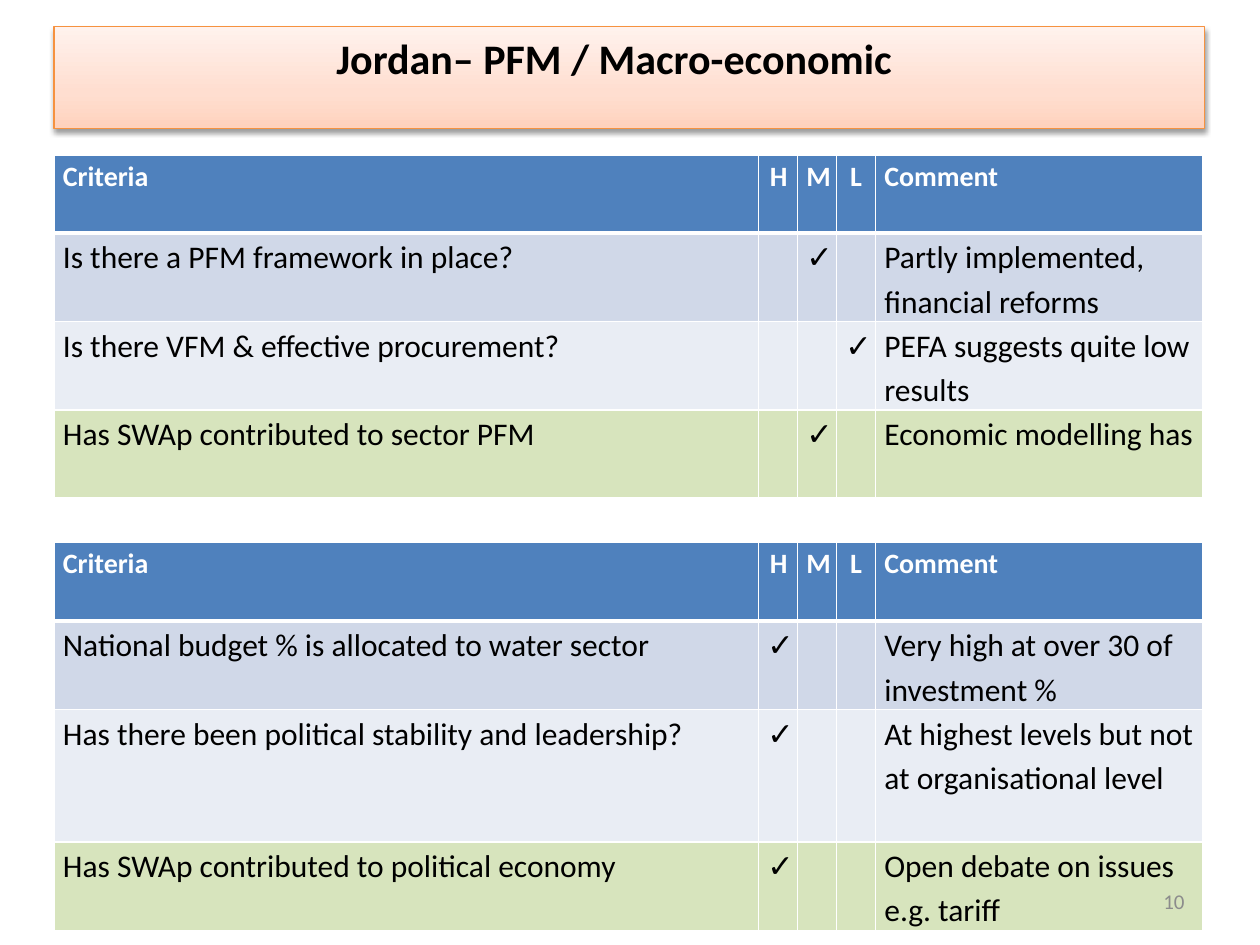
from lxml import etree
from pptx import Presentation
from pptx import util as u
from pptx.dml.color import RGBColor
from pptx.enum import shapes, text
from pptx.oxml import parse_xml

NS = 'xmlns:a="http://schemas.openxmlformats.org/drawingml/2006/main"'
BLACK = RGBColor(0, 0, 0)
WHITE = RGBColor(255, 255, 255)
GRAY = RGBColor(0x8C, 0x8C, 0x8C)
BLUE = RGBColor(0x4F, 0x81, 0xBD)
ORANGE = RGBColor(0xF6, 0x92, 0x40)
BANDS = [BLUE, RGBColor(0xD0, 0xD8, 0xE8), RGBColor(0xE9, 0xED, 0xF4),
         RGBColor(0xD7, 0xE4, 0xBD)]
LEFT, WIDE = 0.43, 9.13
COLS = [5.59, 0.31, 0.31, 0.31, 2.6]
HEAD = ["Criteria", "H", "M", "L", "Comment"]


def write(frame, words, size=18, color=BLACK, bold=False,
          align=text.PP_ALIGN.LEFT, space=None):
    para = frame.paragraphs[0]
    para.alignment = align
    para.line_spacing = space
    run = para.add_run()
    run.text = words
    font = run.font
    font.name, font.size, font.bold = "Calibri", u.Pt(size), bold
    font.color.rgb = color


def edge(cell, side, width):
    props = cell._tc.get_or_add_tcPr()
    props.append(parse_xml(
        f'<a:ln{side} {NS} w="{u.Pt(width)}"><a:solidFill>'
        f'<a:srgbClr val="{WHITE}"/></a:solidFill></a:ln{side}>'))


prs = Presentation()
prs.slide_width, prs.slide_height = u.Inches(10), u.Inches(7.5)
slide = prs.slides.add_slide(prs.slide_layouts[6])

# Criteria tables: top, row heights, then question, mark column, comment
tables = [
    (1.23, [0.62, 0.7, 0.7, 0.7], [
        ("Is there a PFM framework in place?", "M",
         "Partly implemented, financial reforms"),
        ("Is there VFM & effective procurement?", "L",
         "PEFA suggests quite low results"),
        ("Has SWAp contributed to sector PFM", "M",
         "Economic modelling has")]),
    (4.3, [0.63, 0.7, 1.05, 0.7], [
        ("National budget % is allocated to water sector", "H",
         "Very high at over 30 of investment %"),
        ("Has there been political stability and leadership?", "H",
         "At highest levels but not at organisational level"),
        ("Has SWAp contributed to political economy", "H",
         "Open debate on issues e.g. tariff")]),
]
for top, rows, facts in tables:
    grid = slide.shapes.add_table(
        len(rows), len(COLS), u.Inches(LEFT), u.Inches(top),
        u.Inches(WIDE), u.Inches(sum(rows))).table
    for col, width in zip(grid.columns, COLS):
        col.width = u.Inches(width)
    lines = [HEAD] + [
        [ask] + ["✓" if mark == name else "" for name in HEAD[1:4]] + [note]
        for ask, mark, note in facts]
    for r, line in enumerate(lines):
        grid.rows[r].height = u.Inches(rows[r])
        for c, words in enumerate(line):
            cell = grid.cell(r, c)
            cell.margin_left = cell.margin_right = u.Inches(0.07)
            cell.margin_top = cell.margin_bottom = 0
            for side in "LRTB":
                thick = (r, side) in ((0, "B"), (1, "T"))
                edge(cell, side, 3 if thick else 1)
            cell.fill.solid()
            cell.fill.fore_color.rgb = BANDS[r]
            if r == 0:
                mid = words in ("M", "L")
                write(cell.text_frame, words, size=16, color=WHITE,
                      bold=True, space=1.15,
                      align=text.PP_ALIGN.CENTER if mid else text.PP_ALIGN.LEFT)
            elif words:
                write(cell.text_frame, words, space=1.15)
    grid.cell(0, 1).margin_left = u.Inches(0.09)

# Title bar with gradient and soft shadow
bar = slide.shapes.add_shape(
    shapes.MSO_SHAPE.RECTANGLE, u.Inches(LEFT), u.Inches(0.21),
    u.Inches(WIDE), u.Inches(0.81))
bar.line.color.rgb = ORANGE
bar.line.width = u.Pt(0.75)
stops = "".join(
    f'<a:gs pos="{pos * 1000}"><a:srgbClr val="{tint}"/></a:gs>'
    for pos, tint in [(0, "FFD2BD"), (35, "FFDED0"), (100, "FFF2ED")])
props = bar._element.spPr
props.find("{*}prstGeom").addnext(parse_xml(
    f'<a:gradFill {NS} rotWithShape="1"><a:gsLst>{stops}</a:gsLst>'
    '<a:lin ang="16200000" scaled="0"/></a:gradFill>'))
props.append(parse_xml(
    f'<a:effectLst {NS}><a:outerShdw blurRad="{u.Pt(3.1)}" '
    f'dist="{u.Pt(1.6)}" dir="5400000" rotWithShape="0">'
    '<a:srgbClr val="000000"><a:alpha val="38000"/></a:srgbClr>'
    '</a:outerShdw></a:effectLst>'))
frame = bar.text_frame
frame.word_wrap = True
frame.vertical_anchor = text.MSO_ANCHOR.TOP
frame.margin_right = u.Inches(0.34)
write(frame, "Jordan– PFM / Macro-economic", size=24, bold=True,
      align=text.PP_ALIGN.CENTER)

# Page number
box = slide.shapes.add_textbox(
    u.Inches(7.17), u.Inches(6.95), u.Inches(2.33), u.Inches(0.4))
box.text_frame.word_wrap = True
box.text_frame.vertical_anchor = text.MSO_ANCHOR.MIDDLE
write(box.text_frame, "10", size=12, color=GRAY, align=text.PP_ALIGN.RIGHT)

prs.save("out.pptx")
